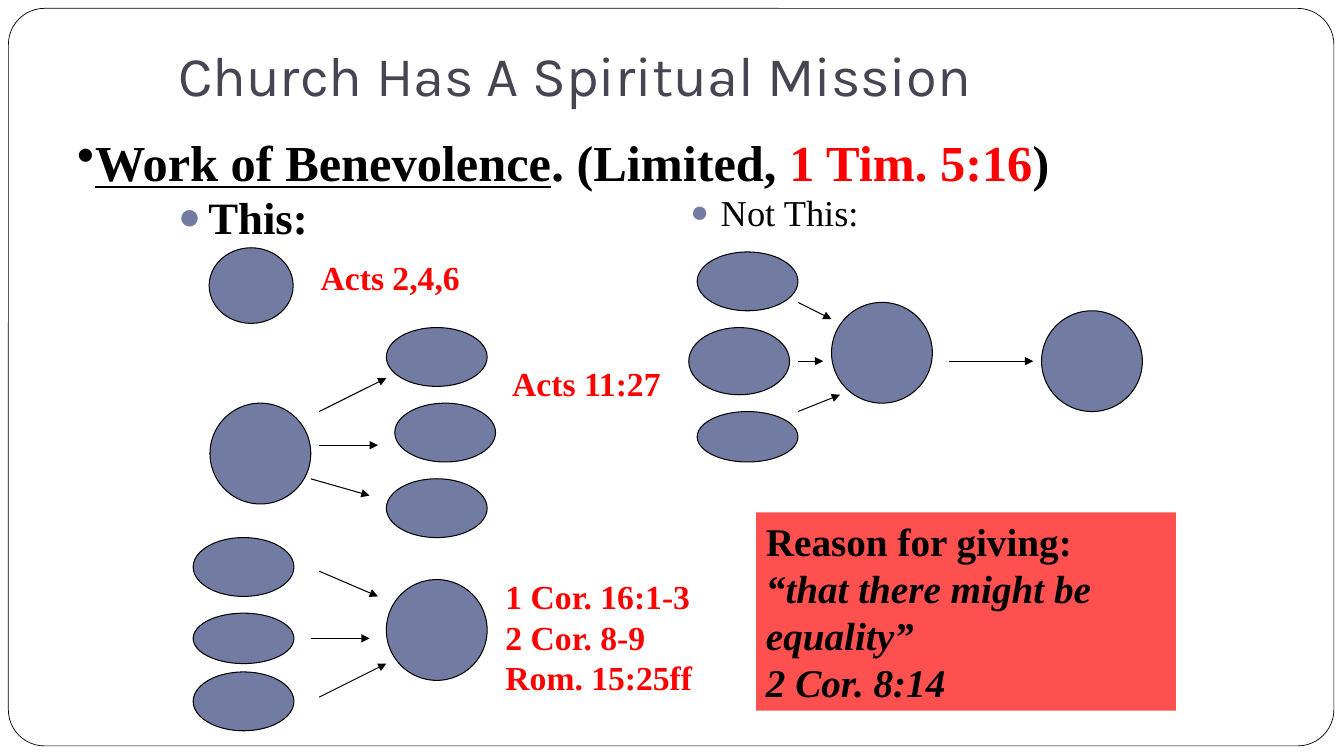
import pptx
import pptx.util
import pptx.dml.color
import pptx.enum.shapes
import pptx.enum.text
import pptx.oxml.ns
import lxml.etree

COLS, ROWS = 160, 90
SERIF = "Times New Roman"
BLUE, BLACK, RED = "727CA3", "000000", "FF0000"
SHAPE = pptx.enum.shapes.MSO_SHAPE
LEFT = pptx.enum.text.PP_ALIGN.LEFT
ANCHOR = pptx.enum.text.MSO_ANCHOR

deck = pptx.Presentation()
deck.slide_width = pptx.util.Inches(13.333)
deck.slide_height = pptx.util.Inches(7.5)
slide = deck.slides.add_slide(deck.slide_layouts[3])


def grid(*spots):
    sides = (deck.slide_width / COLS, deck.slide_height / ROWS)
    return [round(spot * sides[i % 2]) for i, spot in enumerate(spots)]


def hue(code):
    return pptx.dml.color.RGBColor.from_string(code)


def apply(item, values):
    for name, value in values.items():
        setattr(item, name, value)


def place(item, box):
    apply(item, dict(zip(("left", "top", "width", "height"), grid(*box))))


def node(owner, tag, **attrs):
    return lxml.etree.SubElement(owner, pptx.oxml.ns.qn(tag), attrs)


def write(para, text, size, color=BLACK, **style):
    run = para.add_run()
    run.text = text
    apply(run.font, {"name": SERIF, "size": pptx.util.Pt(size), **style})
    run.font.color.rgb = hue(color)


def lines(frame, rows, size, color=BLACK):
    for i, (text, style) in enumerate(rows):
        para = frame.paragraphs[0] if i == 0 else frame.add_paragraph()
        para.alignment = LEFT
        write(para, text, size, color, **style)


def bullet(para, mark, indent=0, color=None):
    props = para._p.get_or_add_pPr()
    width = pptx.util.Inches(indent)
    props.set("marL", str(width))
    props.set("indent", str(-width))
    if color:
        node(node(props, "a:buClr"), "a:srgbClr", val=color)
        node(props, "a:buSzPct", val="85000")
    node(props, "a:buChar", char=mark)


def solid(kind, box, fill, width=None):
    item = slide.shapes.add_shape(kind, *grid(*box))
    item.shadow.inherit = False
    item.fill.solid()
    item.fill.fore_color.rgb = hue(fill)
    if width:
        item.line.color.rgb = hue(BLACK)
        item.line.width = pptx.util.Pt(width)
    else:
        item.line.fill.background()
    return item


def arrow(ends):
    item = slide.shapes.add_connector(
        pptx.enum.shapes.MSO_CONNECTOR.STRAIGHT, *grid(*ends))
    item.line.color.rgb = hue(BLACK)
    item.line.width = pptx.util.Pt(0.75)
    node(item.line._get_or_add_ln(), "a:tailEnd", type="triangle")
    node(item._element.spPr, "a:effectLst")


def border(box):
    item = solid(SHAPE.ROUNDED_RECTANGLE, box, "FFFFFF", 0.5)
    item.adjustments[0] = 0.049
    slide.shapes._spTree.insert(2, item._element)


def title(box):
    item = slide.shapes.title
    place(item, box)
    frame = item.text_frame
    apply(frame, {"vertical_anchor": ANCHOR.BOTTOM,
                  "margin_bottom": pptx.util.Inches(0.1),
                  "auto_size": pptx.enum.text.MSO_AUTO_SIZE.NONE})
    para = frame.paragraphs[0]
    para.alignment = LEFT
    write(para, "Church Has A Spiritual Mission", 40, "464653", name="Karla")


def column(index, box, text, size, **style):
    item = slide.placeholders[index]
    place(item, box)
    item.text_frame.auto_size = pptx.enum.text.MSO_AUTO_SIZE.NONE
    para = item.text_frame.paragraphs[0]
    para.space_before = pptx.util.Pt(5.8)
    bullet(para, "●", 0.3, BLUE)
    write(para, text, size, **style)


def topic(box):
    item = slide.shapes.add_textbox(*grid(*box))
    item.text_frame.word_wrap = True
    para = item.text_frame.paragraphs[0]
    bullet(para, "•")
    write(para, "Work of Benevolence", 36, bold=True, underline=True)
    write(para, ". (Limited, ", 36, bold=True)
    write(para, "1 Tim. 5:16", 36, RED, bold=True)
    write(para, ")", 36, bold=True)


def flow(left, top, ovals, arrows=()):
    for x, y, width, height in ovals:
        solid(SHAPE.OVAL, (left + x, top + y, width, height), BLUE, 0.75)
    for x, y, endx, endy in arrows:
        arrow((left + x, top + y, left + endx, top + endy))


def verses(box, *names):
    item = slide.shapes.add_textbox(*grid(*box))
    item.text_frame.word_wrap = True
    lines(item.text_frame, [(name, {"bold": True}) for name in names], 24, RED)


def reason(box):
    item = solid(SHAPE.RECTANGLE, box, "FF5050")
    frame = item.text_frame
    apply(frame, {"word_wrap": True, "vertical_anchor": ANCHOR.TOP})
    slant = {"bold": True, "italic": True}
    lines(frame, [("Reason for giving:", {"bold": True}),
                  ("“that there might be equality”", slant),
                  ("2 Cor. 8:14", slant)], 28)


def main():
    border((1, 1, 157.8, 87.8))
    title((20, 0, 120, 14))
    column(1, (20, 22, 62, 68), "This:", 32, bold=True)
    column(2, (81, 22, 59, 68), "Not This:", 26)
    topic((8, 15, 144, 8.5))
    flow(24.9, 29.5, [(0, 0, 10, 9)])
    flow(25, 39,
         [(0, 9, 12, 12), (21, 0, 12, 7), (22, 9, 12, 7), (21, 18, 12, 7)],
         [(13, 10, 21, 6), (13, 14, 20, 14), (12, 18, 19, 20)])
    flow(23, 64,
         [(0, 0, 12, 7), (0, 9, 12, 6), (0, 16, 12, 7), (23, 5, 12, 12)],
         [(15, 4, 22, 7), (14, 12, 21, 12), (15, 19, 23, 15)])
    flow(82, 30,
         [(1, 0, 12, 7), (0, 9, 12, 8), (1, 19, 12, 6),
          (17, 6, 12, 12), (42, 7, 12, 12)],
         [(13, 6, 17, 8), (13, 13, 16, 13), (13, 19, 18, 17),
          (31, 13, 41, 13)])
    verses((37, 30, 19.2, 6), "Acts 2,4,6")
    verses((59.8, 42.6, 21.2, 6), "Acts 11:27")
    verses((59, 68, 28.8, 15.7), "1 Cor. 16:1-3", "2 Cor. 8-9", "Rom. 15:25ff")
    reason((90, 61, 50, 23.6))
    deck.save("out.pptx")


if __name__ == "__main__":
    main()
